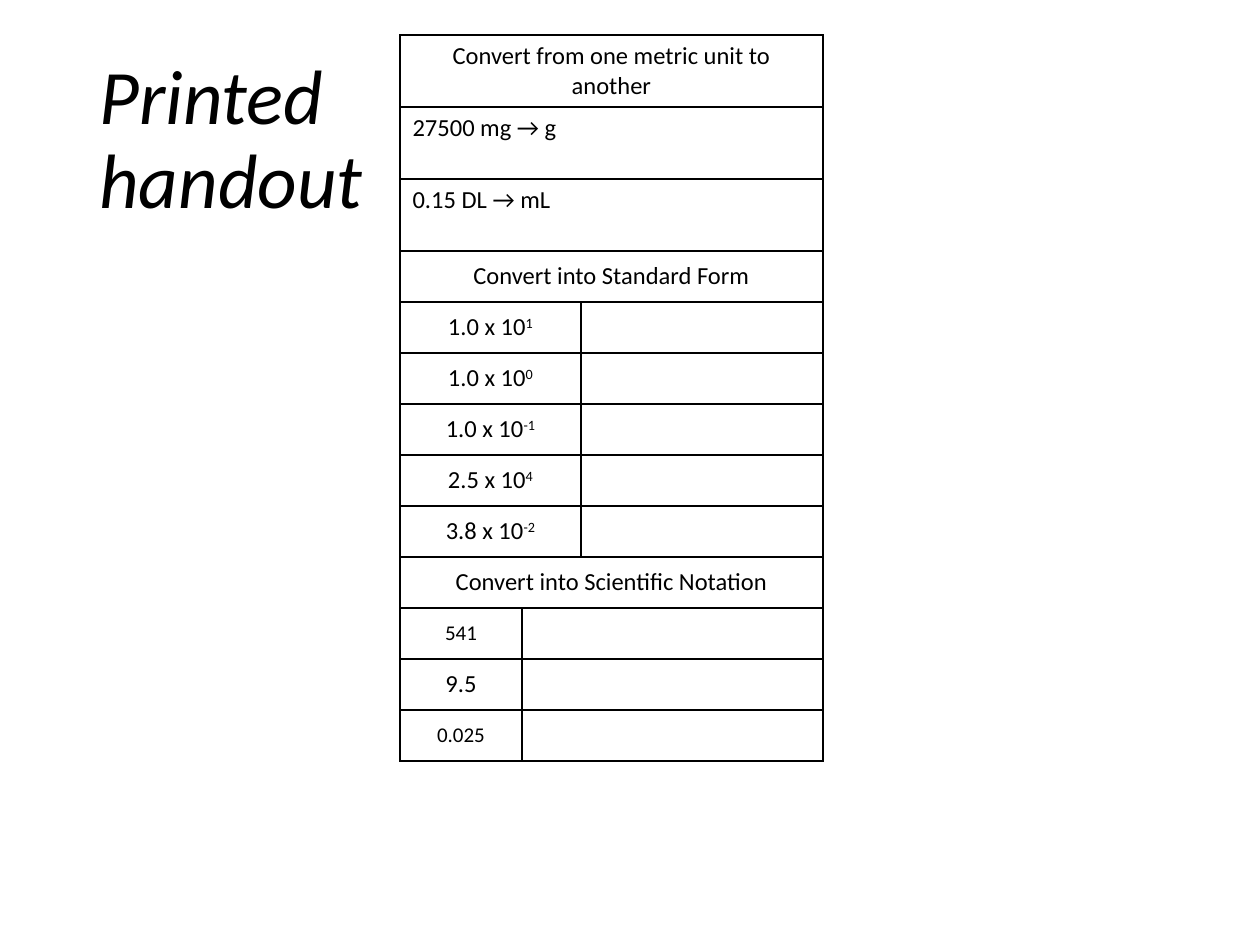
from dataclasses import dataclass

from lxml.etree import SubElement
from pptx import Presentation
from pptx.dml.color import RGBColor
from pptx.enum.text import MSO_ANCHOR, PP_ALIGN
from pptx.oxml.ns import qn
from pptx.util import Emu, Pt

PX = 914400 / 126
INK = "000000"
FONT = "Calibri"
COLUMN_WIDTHS = (122, 59, 242)
TALL, SHORT = 72, 51


@dataclass
class Row:
    """One handout row; its label cell spans the first `span` columns."""
    label: str
    span: int = 3
    exponent: str = ""
    size: int = 14
    height: int = SHORT
    align: PP_ALIGN = PP_ALIGN.CENTER
    anchor: MSO_ANCHOR = MSO_ANCHOR.MIDDLE


QUESTION = {"height": TALL, "align": PP_ALIGN.LEFT, "anchor": MSO_ANCHOR.TOP}
STANDARD_FORM = (("1.0", "1"), ("1.0", "0"), ("1.0", "-1"), ("2.5", "4"), ("3.8", "-2"))
SCIENTIFIC = (("541", 12), ("9.5", 14), ("0.025", 12))
ROWS = [
    Row("Convert from one metric unit to another", height=TALL),
    Row("27500 mg → g", **QUESTION),
    Row("0.15 DL → mL", **QUESTION),
    Row("Convert into Standard Form"),
    *(Row(f"{number} x 10", 2, exponent) for number, exponent in STANDARD_FORM),
    Row("Convert into Scientific Notation"),
    *(Row(number, 1, size=size) for number, size in SCIENTIFIC),
]


def px(length):
    """Turn whole pixels into EMU."""
    return Emu(round(length * PX))


def color(value):
    """Turn a hex string into a colour."""
    return RGBColor.from_string(value)


def apply_format(target, values):
    """Set every attribute in a dict of format values."""
    for name, value in values.items():
        setattr(target, name, value)


def add_run(paragraph, text, size, italic=False):
    """Add a run in the slide font and return it."""
    run = paragraph.add_run()
    run.text = text
    apply_format(run.font, {"name": FONT, "size": Pt(size), "italic": italic})
    run.font.color.rgb = color(INK)
    return run


def style_cell(cell):
    """Give a cell thin solid borders and no fill."""
    properties = cell._tc.get_or_add_tcPr()
    for side in ("lnL", "lnR", "lnT", "lnB"):
        line = SubElement(properties, qn(f"a:{side}"), w=str(Pt(1)))
        fill = SubElement(line, qn("a:solidFill"))
        SubElement(fill, qn("a:srgbClr"), val=INK)
    cell.fill.background()


def fill_label(cell, row):
    """Write a row's label and its raised exponent."""
    cell.vertical_anchor = row.anchor
    paragraph = cell.text_frame.paragraphs[0]
    paragraph.alignment = row.align
    add_run(paragraph, row.label, row.size)
    if row.exponent:
        exponent = add_run(paragraph, row.exponent, row.size)
        exponent._r.get_or_add_rPr().set("baseline", "30000")


def add_title(slide, left, top, width, height):
    """Place the two-line italic title in the given box."""
    box = slide.shapes.add_textbox(px(left), px(top), px(width), px(height))
    frame = box.text_frame
    apply_format(frame, {"word_wrap": True, "vertical_anchor": MSO_ANCHOR.MIDDLE})
    paragraph = frame.paragraphs[0]
    paragraph.line_spacing = 0.9
    add_run(paragraph, "Printed", 44, italic=True)
    paragraph.add_line_break()
    add_run(paragraph, "handout", 44, italic=True)


def add_handout(slide, left, top):
    """Place the exercise table with its corner at the given point."""
    width, height = sum(COLUMN_WIDTHS), sum(row.height for row in ROWS)
    table = slide.shapes.add_table(
        len(ROWS), len(COLUMN_WIDTHS), px(left), px(top), px(width), px(height)
    ).table
    apply_format(table, {"first_row": False, "horz_banding": False})
    for column, column_width in zip(table.columns, COLUMN_WIDTHS):
        column.width = px(column_width)
    last = len(COLUMN_WIDTHS) - 1
    for index, row in enumerate(ROWS):
        table.rows[index].height = px(row.height)
        for column in range(last + 1):
            style_cell(table.cell(index, column))
        label = table.cell(index, 0)
        if row.span > 1:
            label.merge(table.cell(index, row.span - 1))
        if row.span < last:
            table.cell(index, row.span).merge(table.cell(index, last))
        fill_label(label, row)


def main():
    """Build the slide and save it."""
    presentation = Presentation()
    apply_format(presentation, {"slide_width": px(1260), "slide_height": px(945)})
    slide = presentation.slides.add_slide(presentation.slide_layouts[6])
    add_title(slide, 87, 50, 1086, 183)
    add_handout(slide, 400, 35)
    presentation.save("out.pptx")


if __name__ == "__main__":
    main()
